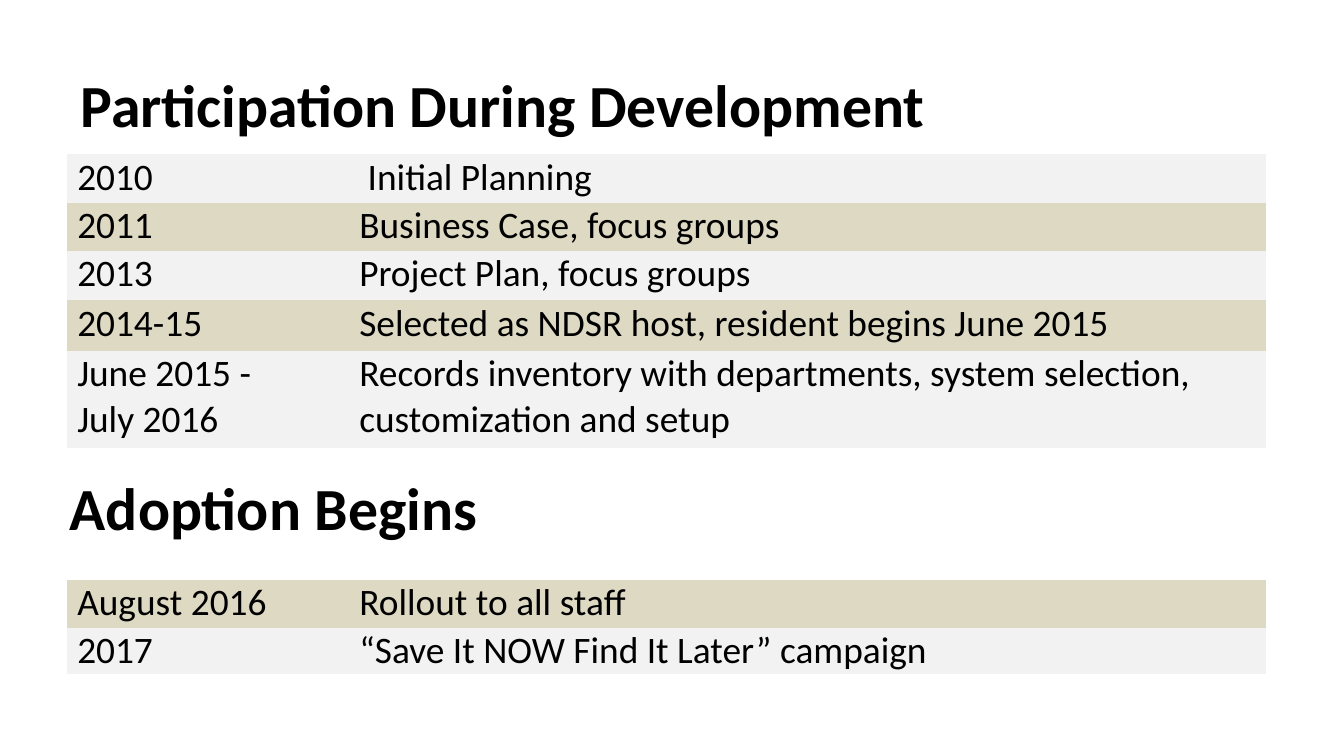
import dataclasses

import pptx
import pptx.dml.color
import pptx.enum.text
import pptx.util

Cm = pptx.util.Cm


@dataclasses.dataclass(frozen=True)
class Theme:
    font: str = "Calibri"
    text: str = "000000"
    light: str = "F2F2F2"
    sand: str = "DDD9C3"
    heading_size: int = 32
    body_size: int = 20


theme = Theme()
plain_table_style = "{2D5ABB26-0587-4C30-8999-92F81FD0307C}"


def format_runs(text_frame, size, bold=False):
    for paragraph in text_frame.paragraphs:
        for run in paragraph.runs:
            run.font.name = theme.font
            run.font.size = pptx.util.Pt(size)
            run.font.bold = bold
            run.font.color.rgb = pptx.dml.color.RGBColor.from_string(theme.text)


presentation = pptx.Presentation()
presentation.slide_width = Cm(25.4)
presentation.slide_height = Cm(14.29)
slide = presentation.slides.add_slide(presentation.slide_layouts[6])

headings = [
    ("Participation During Development", 1.27, 0.58),
    ("Adoption Begins", 1.07, 8.2),
]
for heading, left, top in headings:
    shape = slide.shapes.add_textbox(Cm(left), Cm(top), Cm(22.86), Cm(2.77))
    text_frame = shape.text_frame
    text_frame.word_wrap = True
    text_frame.vertical_anchor = pptx.enum.text.MSO_ANCHOR.MIDDLE
    text_frame.text = heading
    format_runs(text_frame, theme.heading_size, bold=True)

development = [
    ("2010", " Initial Planning", 0.91),
    ("2011", "Business Case, focus groups", 0.92),
    ("2013", "Project Plan, focus groups", 0.93),
    ("2014-15", "Selected as NDSR host, resident begins June 2015", 0.95),
    (
        "June 2015 -\nJuly 2016",
        "Records inventory with departments, system selection, customization and setup",
        1.83,
    ),
]
adoption = [
    ("August 2016", "Rollout to all staff", 0.91),
    ("2017", "“Save It NOW Find It Later” campaign", 0.87),
]
timelines = [
    (development, 2.92, (theme.light, theme.sand)),
    (adoption, 10.96, (theme.sand, theme.light)),
]
column_widths = (5.33, 17.33)

for entries, top, bands in timelines:
    total_height = sum(height for date, activity, height in entries)
    shape = slide.shapes.add_table(
        len(entries), 2, Cm(1.27), Cm(top), Cm(sum(column_widths)), Cm(total_height)
    )
    table = shape.table
    table.first_row = False
    table.horz_banding = False
    table._tbl.tblPr[0].text = plain_table_style
    for column, width in zip(table.columns, column_widths):
        column.width = Cm(width)
    for index, (date, activity, height) in enumerate(entries):
        row = table.rows[index]
        row.height = Cm(height)
        for cell, text in zip(row.cells, (date, activity)):
            cell.margin_left = cell.margin_right = Cm(0.19)
            cell.margin_top = cell.margin_bottom = Cm(0)
            cell.fill.solid()
            cell.fill.fore_color.rgb = pptx.dml.color.RGBColor.from_string(bands[index % 2])
            cell.text_frame.text = text
            format_runs(cell.text_frame, theme.body_size)

presentation.save("out.pptx")
